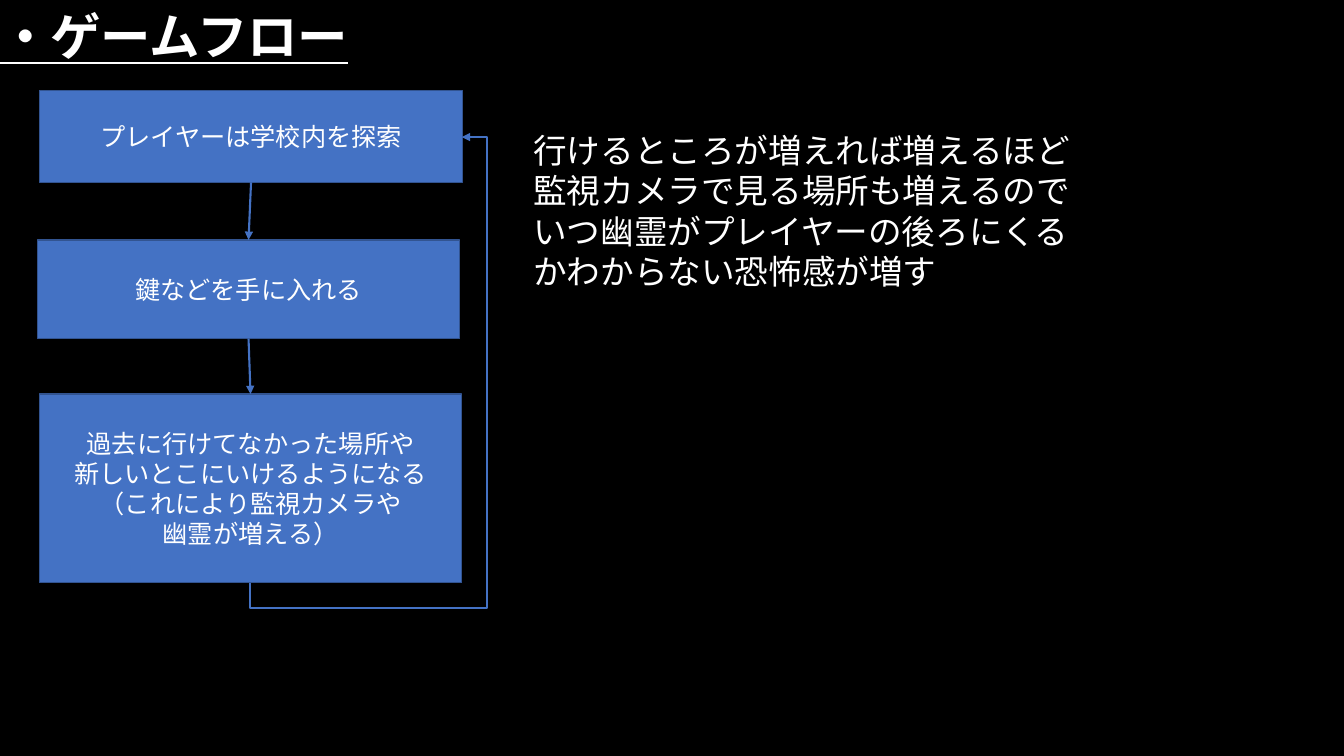
from dataclasses import dataclass

import pptx
import pptx.dml.color
import pptx.enum.dml
import pptx.enum.shapes
import pptx.enum.text
import pptx.oxml
import pptx.oxml.ns
import pptx.util
from pptx.util import Inches

COLORS = {"background": "000000", "text": "FFFFFF", "box": "4472C4", "outline": "325491"}
FONT = "Calibri"
TOP, BOTTOM, RIGHT = 0, 2, 3
ALIGN = pptx.enum.text.PP_ALIGN
ANCHOR = pptx.enum.text.MSO_ANCHOR
AUTO_SIZE = pptx.enum.text.MSO_AUTO_SIZE
CONNECTOR = pptx.enum.shapes.MSO_CONNECTOR


@dataclass
class Step:
    left: float
    top: float
    width: float
    height: float
    lines: list[str]


STEPS = [
    Step(0.39, 0.9, 4.2, 0.91, ["プレイヤーは学校内を探索"]),
    Step(0.37, 2.38, 4.19, 0.98, ["鍵などを手に入れる"]),
    Step(0.39, 3.91, 4.19, 1.87, [
        "過去に行けてなかった場所や",
        "新しいとこにいけるようになる",
        "（これにより監視カメラや",
        "幽霊が増える）",
    ]),
]
REMARKS = [
    "行けるところが増えれば増えるほど監視カメラで見る場所も増えるので",
    "いつ幽霊がプレイヤーの後ろにくるかわからない恐怖感が増す",
]


def color(name: str) -> pptx.dml.color.RGBColor:
    return pptx.dml.color.RGBColor.from_string(COLORS[name])


def place(shape, left: float, top: float, width: float, height: float) -> None:
    position = {"left": left, "top": top, "width": width, "height": height}
    for name, value in position.items():
        setattr(shape, name, Inches(value))


def write(shape, lines: list[str], size: int, align, anchor, auto_size, **font_format) -> None:
    frame = shape.text_frame
    frame_format = {"word_wrap": True, "vertical_anchor": anchor, "auto_size": auto_size}
    for name, value in frame_format.items():
        setattr(frame, name, value)
    font_format = {"name": FONT, "size": pptx.util.Pt(size), **font_format}
    for index, line in enumerate(lines):
        para = frame.add_paragraph() if index else frame.paragraphs[0]
        para.alignment = align
        span = para.add_run()
        span.text = line
        span.font.color.rgb = color("text")
        for name, value in font_format.items():
            setattr(span.font, name, value)


def add_step(slide, step: Step):
    box = slide.shapes.add_shape(
        pptx.enum.shapes.MSO_SHAPE.RECTANGLE,
        *map(Inches, (step.left, step.top, step.width, step.height)))
    box.shadow.inherit = False
    box.fill.solid()
    box.fill.fore_color.rgb = color("box")
    box.line.color.rgb = color("outline")
    box.line.width = pptx.util.Pt(1)
    write(box, step.lines, 18, ALIGN.CENTER, ANCHOR.MIDDLE, AUTO_SIZE.NONE)
    return box


def add_arrow(slide, kind, start, start_side: int, end, end_side: int):
    arrow = slide.shapes.add_connector(kind, 0, 0, 0, 0)
    arrow.begin_connect(start, start_side)
    arrow.end_connect(end, end_side)
    arrow.line.color.rgb = color("box")
    arrow.line.width = pptx.util.Pt(1.5)
    namespace = pptx.oxml.ns.nsdecls("a")
    arrow.line._get_or_add_ln().append(
        pptx.oxml.parse_xml(f'<a:tailEnd {namespace} type="triangle"/>'))
    arrow._element.spPr.append(pptx.oxml.parse_xml(f"<a:effectLst {namespace}/>"))
    return arrow


def route_back(arrow) -> None:
    """Lead the elbow below the last step, up its right side and into the first step."""
    place(arrow, 1.32, 2.52, 4.42, 2.1)
    properties = arrow._element.spPr
    frame = properties.find(pptx.oxml.ns.qn("a:xfrm"))
    for name, value in {"rot": "5400000", "flipH": "1", "flipV": "1"}.items():
        frame.set(name, value)
    old_geometry = properties.find(pptx.oxml.ns.qn("a:prstGeom"))
    properties.replace(old_geometry, pptx.oxml.parse_xml(
        f'<a:prstGeom {pptx.oxml.ns.nsdecls("a")} prst="bentConnector4"><a:avLst>'
        '<a:gd name="adj1" fmla="val -5700"/><a:gd name="adj2" fmla="val 111900"/>'
        "</a:avLst></a:prstGeom>"))


def main() -> None:
    deck = pptx.Presentation()
    deck.slide_width, deck.slide_height = Inches(13.33), Inches(7.5)
    slide = deck.slides.add_slide(deck.slide_layouts.get_by_name("Title Only"))
    slide.background.fill.solid()
    slide.background.fill.fore_color.rgb = color("background")

    title = slide.shapes.title
    place(title, -0.1, 0, 4.2, 0.71)
    write(title, ["・ゲームフロー"], 36, ALIGN.LEFT, ANCHOR.TOP,
          AUTO_SIZE.SHAPE_TO_FIT_TEXT, bold=True, underline=True)

    remark_box = slide.shapes.add_textbox(*map(Inches, (5.19, 1.24, 5.67, 1.72)))
    write(remark_box, REMARKS, 24, ALIGN.LEFT, ANCHOR.TOP, AUTO_SIZE.SHAPE_TO_FIT_TEXT)

    boxes = [add_step(slide, step) for step in STEPS]
    for upper, lower in zip(boxes, boxes[1:]):
        add_arrow(slide, CONNECTOR.STRAIGHT, upper, BOTTOM, lower, TOP)
    route_back(add_arrow(slide, CONNECTOR.ELBOW, boxes[-1], BOTTOM, boxes[0], RIGHT))

    deck.save("out.pptx")


if __name__ == "__main__":
    main()
